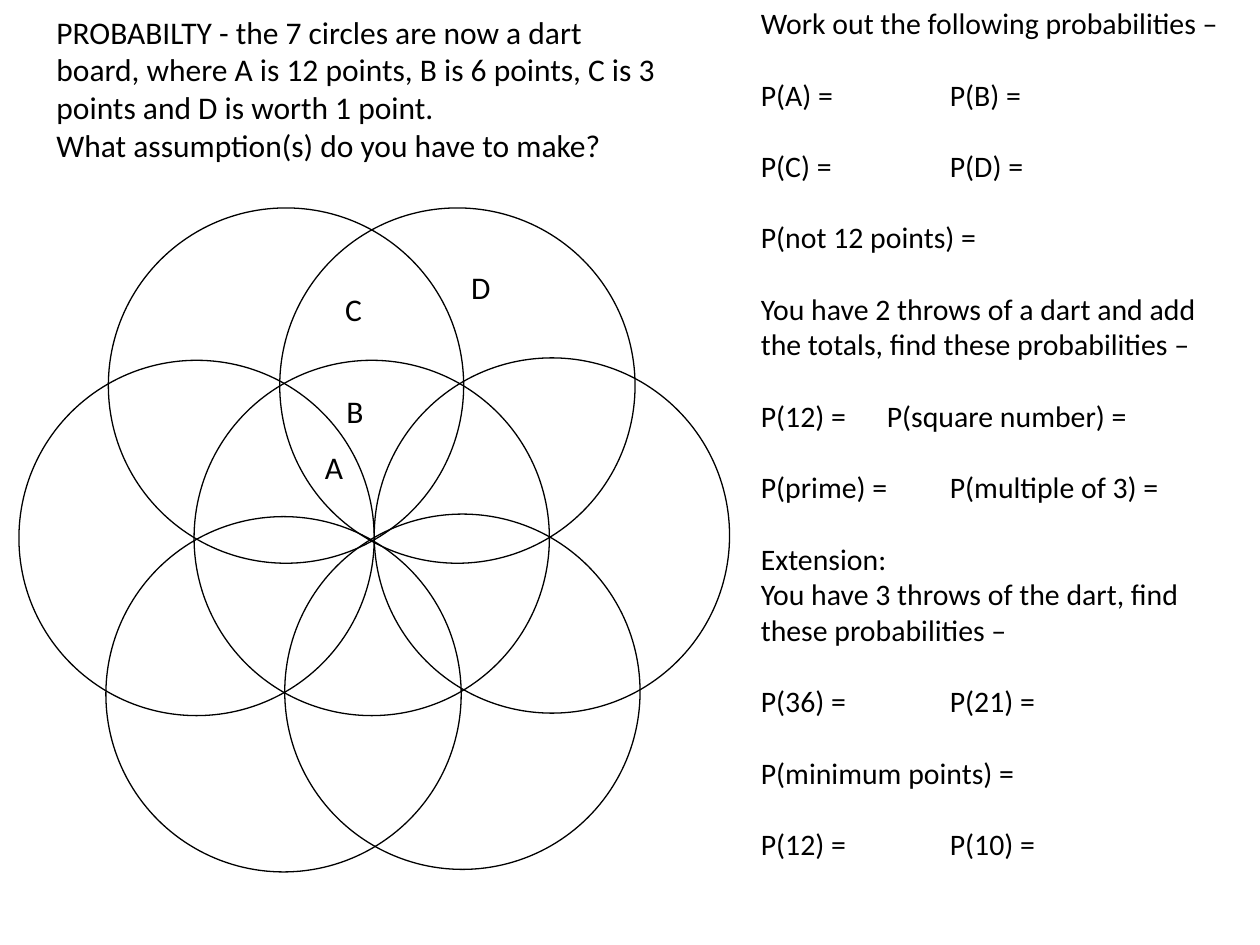
from pptx import Presentation
from pptx.dml.color import RGBColor
from pptx.enum import shapes, text
from pptx.util import Inches, Pt

# Content
INTRO = [
    "PROBABILTY - the 7 circles are now a dart board, where A is 12 points, "
    "B is 6 points, C is 3 points and D is worth 1 point.",
    "What assumption(s) do you have to make?",
]
# Each group of lines is set apart from the one before by one line
QUESTIONS = [
    ["Work out the following probabilities –"],
    ["P(A) =\t\tP(B) ="],
    ["P(C) =\t\tP(D) ="],
    ["P(not 12 points) ="],
    ["You have 2 throws of a dart and add the totals, find these probabilities –"],
    ["P(12) =\tP(square number) ="],
    ["P(prime) =\tP(multiple of 3) ="],
    ["Extension:", "You have 3 throws of the dart, find these probabilities –"],
    ["P(36) =\t\tP(21) ="],
    ["P(minimum points) ="],
    ["P(12) =\t\tP(10) ="],
]
DIAMETER = 2.82
CIRCLES = [(1.54, 2.86), (2.97, 2.84), (2.22, 1.65), (0.86, 1.65),
           (0.15, 2.86), (0.84, 4.1), (2.26, 4.08)]  # left, top
REGIONS = {"A": (2.48, 3.51), "B": (2.65, 3.06),
           "C": (2.64, 2.25), "D": (3.64, 2.08)}
INK = "000000"


def colour(value):
    return RGBColor.from_string(value)


def add_text(slide, groups, left, top, width, height, size=18, gap=0):
    """Write groups of lines, with a gap in points between groups."""
    box = slide.shapes.add_textbox(*map(Inches, (left, top, width, height)))
    frame = box.text_frame
    frame.word_wrap = True
    frame.auto_size = text.MSO_AUTO_SIZE.SHAPE_TO_FIT_TEXT
    paragraph = frame.paragraphs[0]
    for g, group in enumerate(groups):
        for n, line in enumerate(group):
            if g or n:
                paragraph = frame.add_paragraph()
            if g and not n:
                paragraph.space_before = Pt(gap)
            run = paragraph.add_run()
            run.text = line
            run.font.name = "Calibri"
            run.font.size = Pt(size)
            run.font.color.rgb = colour(INK)


def add_circle(slide, left, top):
    circle = slide.shapes.add_shape(
        shapes.MSO_SHAPE.OVAL, Inches(left), Inches(top),
        Inches(DIAMETER), Inches(DIAMETER))
    circle.shadow.inherit = False
    circle.fill.background()
    circle.line.color.rgb = colour(INK)
    circle.line.width = Pt(0.75)


def main():
    deck = Presentation()
    deck.slide_width, deck.slide_height = Inches(10), Inches(7.5)
    slide = deck.slides.add_slide(deck.slide_layouts[6])

    # Dart board
    for left, top in CIRCLES:
        add_circle(slide, left, top)
    for region, (left, top) in REGIONS.items():
        add_text(slide, [[region]], left, top, 0.63, 0.4)

    # Introduction and questions
    add_text(slide, [INTRO], 0.35, 0.05, 5.04, 1.31)
    add_text(slide, QUESTIONS, 5.94, -0.01, 3.94, 7.54, size=17, gap=20.4)

    deck.save("out.pptx")


if __name__ == "__main__":
    main()
